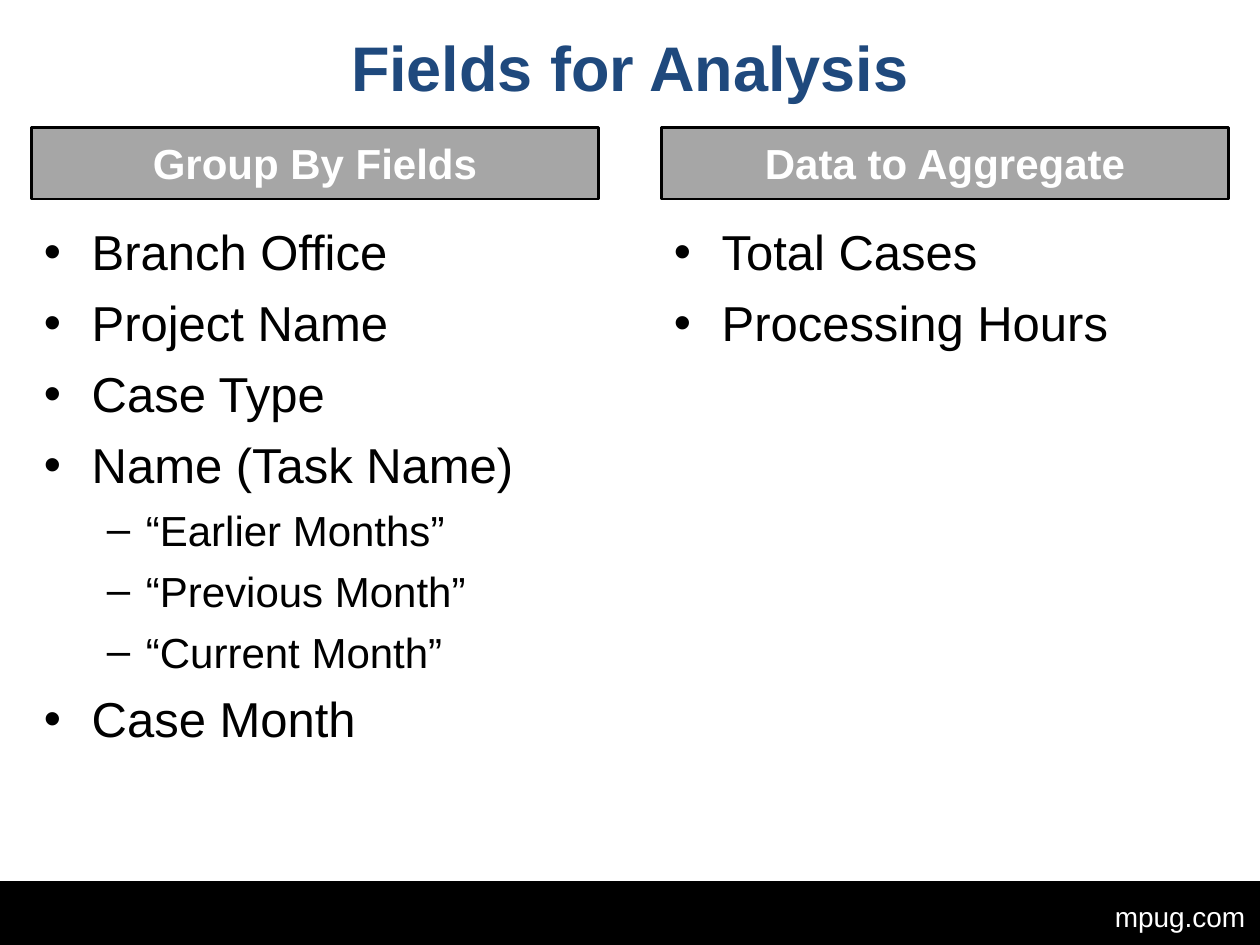
from lxml import etree
from pptx import Presentation
from pptx.dml.color import RGBColor
from pptx.enum.shapes import MSO_SHAPE
from pptx.enum.text import MSO_ANCHOR, MSO_AUTO_SIZE, PP_ALIGN
from pptx.oxml.ns import qn
from pptx.util import Inches, Pt

RECT = MSO_SHAPE.RECTANGLE
MIDDLE, BOTTOM = MSO_ANCHOR.MIDDLE, MSO_ANCHOR.BOTTOM
CENTER = PP_ALIGN.CENTER
FIT, FIXED = MSO_AUTO_SIZE.SHAPE_TO_FIT_TEXT, MSO_AUTO_SIZE.NONE

FONT = "Arial"
COLORS = {"title": "1F497D", "head": "A6A6A6", "dark": "000000", "light": "FFFFFF"}

# Level: bullet, left margin, hanging indent, text size, space before
LEVELS = [("•", 0.38, 0.38, 28, 7), ("–", 0.81, 0.31, 24, 6)]

GROUPS = [
    ("Branch Office", 0),
    ("Project Name", 0),
    ("Case Type", 0),
    ("Name (Task Name)", 0),
    ("“Earlier Months”", 1),
    ("“Previous Month”", 1),
    ("“Current Month”", 1),
    ("Case Month", 0),
]
TOTALS = [("Total Cases", 0), ("Processing Hours", 0)]


def color(name):
    return RGBColor.from_string(COLORS[name])


def add_run(para, text, size, tint, bold=False):
    run = para.add_run()
    run.text = text
    font = run.font
    font.name, font.size, font.bold = FONT, Pt(size), bold
    font.color.rgb = color(tint)


def add_rect(slide, box, fill, width):
    rect = slide.shapes.add_shape(RECT, *map(Inches, box))
    rect.shadow.inherit = False
    rect.fill.solid()
    rect.fill.fore_color.rgb = color(fill)
    rect.line.color.rgb = color("dark")
    rect.line.width = Pt(width)
    return rect


def set_bullet(para, mark, left, hang):
    props = para._p.get_or_add_pPr()
    props.set("marL", str(Inches(left)))
    props.set("indent", str(-Inches(hang)))
    etree.SubElement(props, qn("a:buFont")).set("typeface", FONT)
    etree.SubElement(props, qn("a:buChar")).set("char", mark)


def add_title(slide, box, text):
    title = slide.shapes.title
    title.left, title.top, title.width, title.height = map(Inches, box)
    frame = title.text_frame
    frame.auto_size = FIXED
    frame.vertical_anchor = BOTTOM
    frame.margin_bottom = Inches(0.01)
    para = frame.paragraphs[0]
    para.alignment = CENTER
    add_run(para, text, 36, "title", True)


def add_footer(slide, box, text):
    left, top, width, height = box
    add_rect(slide, box, "dark", 0.75)
    label = slide.shapes.add_textbox(
        Inches(left + width - 1.25), Inches(top + 0.09), Inches(1.25), Inches(0.37)
    )
    frame = label.text_frame
    frame.word_wrap = False
    frame.auto_size = FIT
    add_run(frame.paragraphs[0], text, 16, "light")


def add_head(slide, box, text):
    frame = add_rect(slide, box, "head", 1.5).text_frame
    frame.vertical_anchor = MIDDLE
    para = frame.paragraphs[0]
    para.alignment = CENTER
    add_run(para, text, 24, "light", True)


def add_list(slide, box, items):
    frame = slide.shapes.add_textbox(*map(Inches, box)).text_frame
    frame.word_wrap = True
    frame.margin_top = Inches(0.08)
    for i, (text, level) in enumerate(items):
        mark, left, hang, size, space = LEVELS[level]
        para = frame.add_paragraph() if i else frame.paragraphs[0]
        para.level = level
        if i:
            para.space_before = Pt(space)
        set_bullet(para, mark, left, hang)
        add_run(para, text, size, "dark")


def add_column(slide, box, head, items):
    """Place a heading bar with a bulleted list below it."""
    left, top, width, height = box
    add_head(slide, (left, top, width, 0.57), head)
    add_list(slide, (left, top + 0.67, width, height - 0.67), items)


def main():
    deck = Presentation()
    deck.slide_width, deck.slide_height = Inches(10), Inches(7.5)
    slide = deck.slides.add_slide(deck.slide_layouts[5])
    add_footer(slide, (0, 7, 10, 0.5), "mpug.com")
    add_title(slide, (0.25, 0.17, 9.5, 0.67), "Fields for Analysis")
    add_column(slide, (0.25, 1.01, 4.5, 5.83), "Group By Fields", GROUPS)
    add_column(slide, (5.25, 1.01, 4.5, 5.83), "Data to Aggregate", TOTALS)
    deck.save("out.pptx")


if __name__ == "__main__":
    main()
